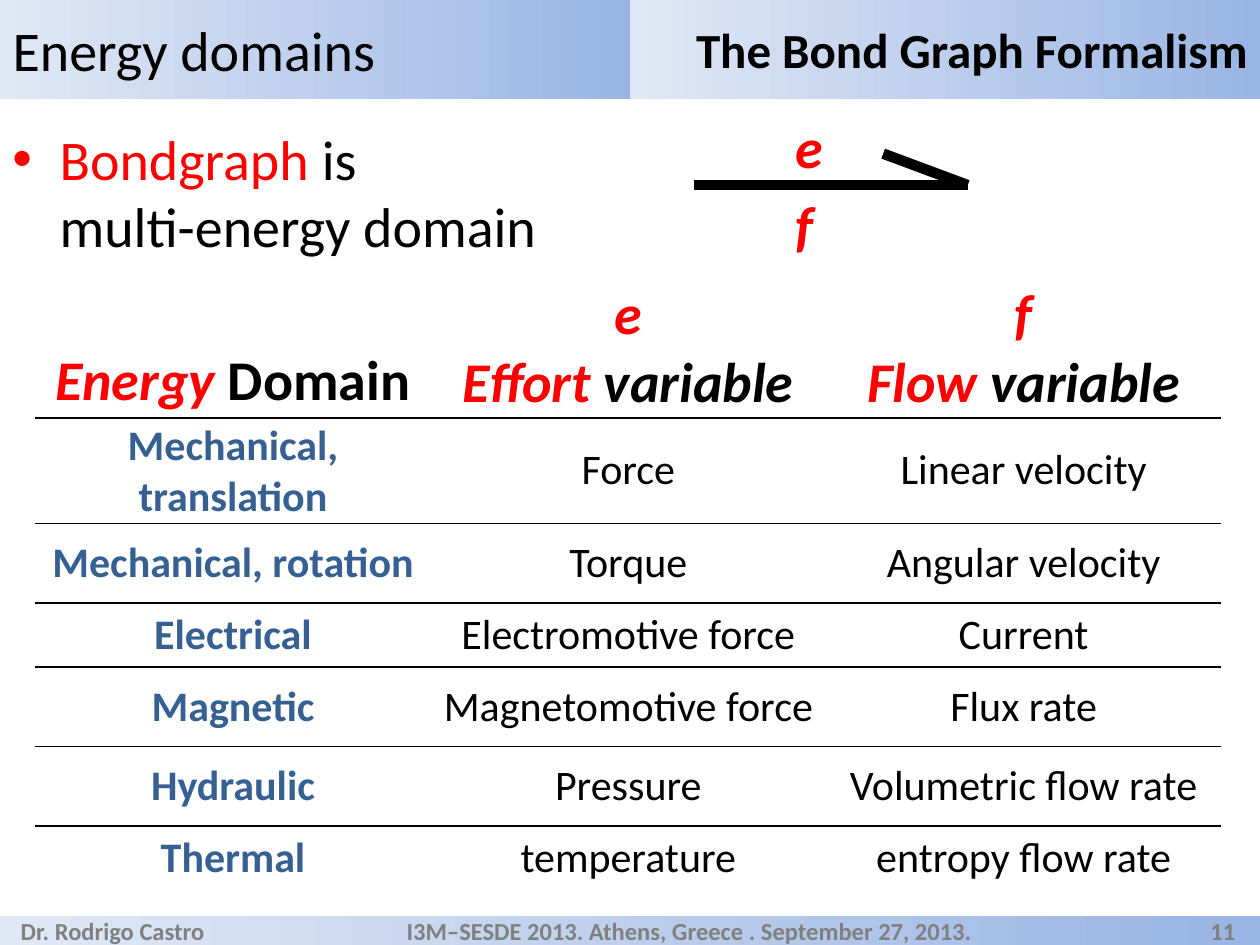
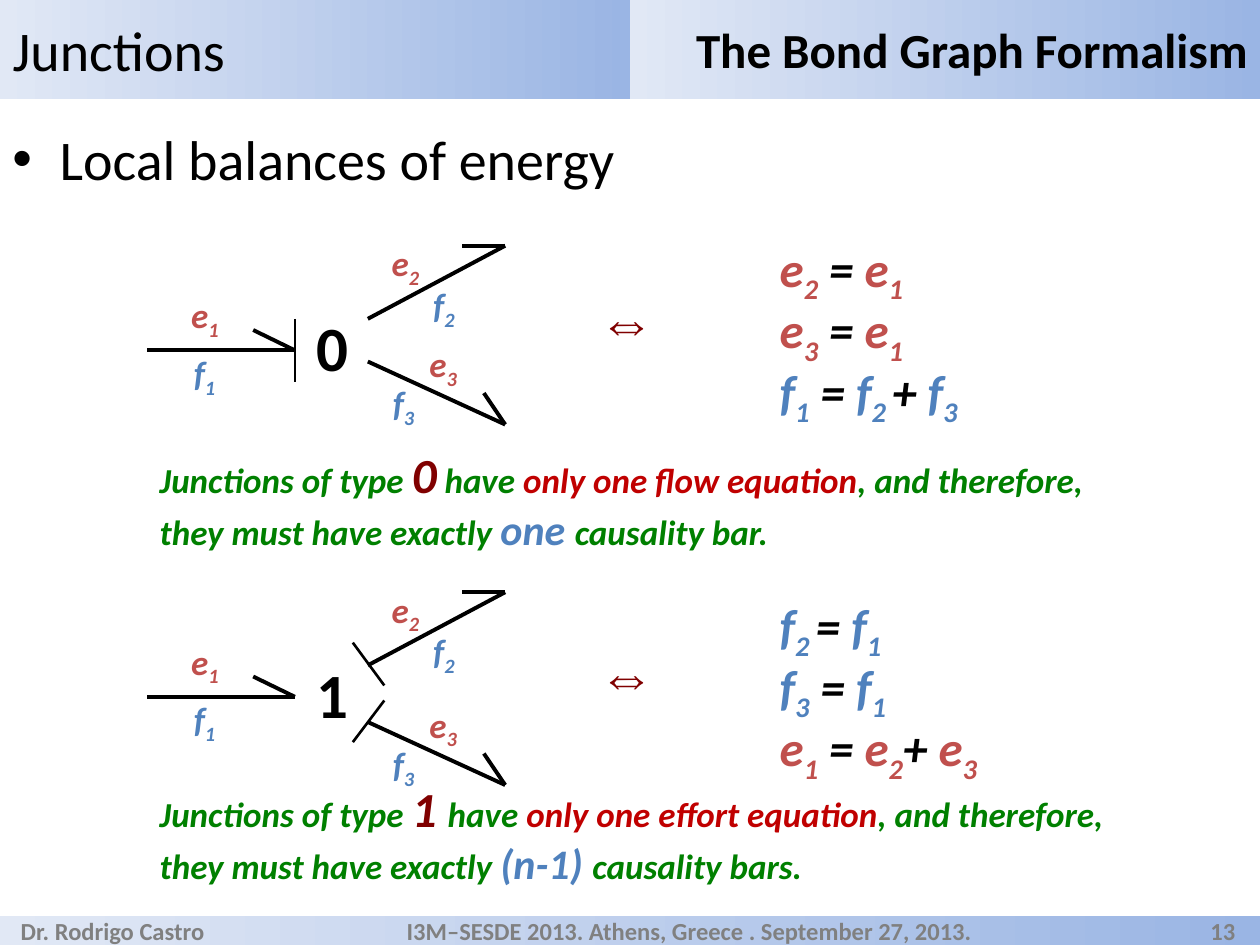
from lxml import etree
from pptx import Presentation
from pptx.dml.color import RGBColor
from pptx.enum.shapes import MSO_CONNECTOR, MSO_SHAPE
from pptx.enum.text import MSO_ANCHOR, MSO_AUTO_SIZE, PP_ALIGN
from pptx.oxml.ns import qn
from pptx.util import Pt

RECT = MSO_SHAPE.RECTANGLE
STRAIGHT = MSO_CONNECTOR.STRAIGHT
TOP, MIDDLE, BOTTOM = MSO_ANCHOR.TOP, MSO_ANCHOR.MIDDLE, MSO_ANCHOR.BOTTOM
LEFT, CENTER, RIGHT = PP_ALIGN.LEFT, PP_ALIGN.CENTER, PP_ALIGN.RIGHT
FIXED = MSO_AUTO_SIZE.NONE

BLACK = RGBColor(0x00, 0x00, 0x00)
RED = RGBColor(0xFF, 0x00, 0x00)
GRAY = RGBColor(0x80, 0x80, 0x80)
NAVY = RGBColor(0x37, 0x60, 0x92)
ROSE = RGBColor(0xC0, 0x50, 0x4D)
BLUE = RGBColor(0x4F, 0x81, 0xBD)
GREEN = RGBColor(0x00, 0x80, 0x00)
MAROON = RGBColor(0x80, 0x00, 0x00)
CRIMSON = RGBColor(0xC0, 0x00, 0x00)
DEEP = RGBColor(0x9A, 0xB5, 0xE4)
PALE = RGBColor(0xE1, 0xE8, 0xF5)
HUES = {"e": ROSE, "f": BLUE}


def write(frame, rows, align=LEFT, anchor=TOP, font="Calibri"):
    """Each run is (text, size, colour, style); style letters: b, i, s for subscript."""
    frame.word_wrap = True
    frame.vertical_anchor = anchor
    for n, runs in enumerate(rows):
        para = frame.add_paragraph() if n else frame.paragraphs[0]
        para.alignment = align
        for text, size, color, style in runs:
            if text == "\n":
                para.add_line_break()
                continue
            run = para.add_run()
            run.text = text
            run.font.name = font
            run.font.size = Pt(size)
            run.font.color.rgb = color
            run.font.bold = "b" in style
            run.font.italic = "i" in style
            if "s" in style:
                run._r.get_or_add_rPr().set("baseline", "-25000")


def draw(slide, ends, width):
    line = slide.shapes.add_connector(STRAIGHT, *map(Pt, ends))
    line.line.color.rgb = BLACK
    line.line.width = Pt(width)
    etree.SubElement(line._element.spPr, qn("a:effectLst"))


deck = Presentation()
deck.slide_width, deck.slide_height = Pt(720), Pt(540)

pages = [
    ("Energy domains", "11",
     [("Bondgraph ", 32, RED, ""), ("is ", 32, BLACK, ""),
      ("\n", 32, BLACK, ""), ("multi-energy domain", 32, BLACK, "")]),
    ("Junctions", "13", [("Local balances of energy", 32, BLACK, "")]),
]
bands = [(360, 0, 360, 56.7), (0, 0, 360, 56.7), (0, 523.5, 720, 16.5)]
slides = []

for name, number, point in pages:
    slide = deck.slides.add_slide(deck.slide_layouts[5])
    slides.append(slide)
    for box in bands:
        band = slide.shapes.add_shape(RECT, *map(Pt, box))
        band.shadow.inherit = False
        band.line.fill.background()
        band.fill.gradient()
        band.fill.gradient_angle = 180
        for stop, color in zip(band.fill.gradient_stops, (DEEP, PALE)):
            stop.color.rgb = color

    title = slide.shapes.title
    slide.shapes._spTree.append(title._element)
    title.left, title.top, title.width, title.height = map(Pt, (0, 0, 360, 56.2))
    title.text_frame.auto_size = FIXED
    write(title.text_frame, [[(name, 32, BLACK, "")]], LEFT, MIDDLE)

    labels = [
        ((360, 0, 360, 56.2), "The Bond Graph Formalism", 28, BLACK, RIGHT),
        ((4.8, 523.5, 150, 16.5), "Dr. Rodrigo Castro", 14, GRAY, LEFT),
        ((214, 523.5, 360, 16.5), "I3M–SESDE 2013. Athens, Greece . September 27, 2013.",
         14, GRAY, CENTER),
        ((653, 523.5, 60, 16.5), number, 14, GRAY, RIGHT),
    ]
    for box, text, size, color, align in labels:
        label = slide.shapes.add_textbox(*map(Pt, box))
        write(label.text_frame, [[(text, size, color, "b")]], align, MIDDLE)

    body = slide.shapes.add_textbox(*map(Pt, (0, 67.7, 720, 455.8)))
    write(body.text_frame, [point])
    props = body.text_frame.paragraphs[0]._p.get_or_add_pPr()
    props.set("marL", str(Pt(27)))
    props.set("indent", str(Pt(-27)))
    etree.SubElement(props, qn("a:buFont")).set("typeface", "Arial")
    etree.SubElement(props, qn("a:buChar")).set("char", "•")

domains, balance = slides

heads = [
    [[("Energy ", 32, RED, "bi"), ("Domain", 32, BLACK, "b")]],
    [[("e", 32, RED, "bi")],
     [("Effort", 32, RED, "bi"), (" variable", 32, BLACK, "bi")]],
    [[("f", 32, RED, "bi")],
     [("Flow", 32, RED, "bi"), (" variable", 32, BLACK, "bi")]],
]
facts = [
    ("Mechanical, translation", "Force", "Linear velocity"),
    ("Mechanical, rotation", "Torque", "Angular velocity"),
    ("Electrical", "Electromotive force", "Current"),
    ("Magnetic", "Magnetomotive force", "Flux rate"),
    ("Hydraulic", "Pressure", "Volumetric flow rate"),
    ("Thermal", "temperature", "entropy flow rate"),
]
grid = [heads] + [
    [[[(text, 24, BLACK if col else NAVY, "" if col else "b")]]
     for col, text in enumerate(fact)]
    for fact in facts
]
heights = [67, 53.3, 45.4, 36.7, 45.4, 45.4, 36.7]
last = len(grid) - 1

table = domains.shapes.add_table(
    len(grid), 3, Pt(20.2), Pt(159.1), Pt(677.7), Pt(sum(heights))).table
table.first_row = table.horz_banding = False
for col in table.columns:
    col.width = Pt(225.9)
for n, cells in enumerate(grid):
    table.rows[n].height = Pt(heights[n])
    for col, rows in enumerate(cells):
        cell = table.cell(n, col)
        cell.margin_left = cell.margin_right = Pt(2.9)
        cell.margin_top = cell.margin_bottom = Pt(1.4)
        write(cell.text_frame, rows, CENTER)
        cell.vertical_anchor = MIDDLE if n else BOTTOM
        props = cell._tc.get_or_add_tcPr()
        ruled = {"T": n > 0, "B": n < last}
        for side in "LRTB":
            edge = etree.SubElement(props, qn("a:ln" + side), w=str(Pt(1)))
            if ruled.get(side):
                fill = etree.SubElement(edge, qn("a:solidFill"))
                etree.SubElement(fill, qn("a:srgbClr"), val=str(BLACK))
            else:
                etree.SubElement(edge, qn("a:noFill"))
        cell.fill.background()

for ends in [(396.7, 105.8, 553, 105.8), (553, 105.8, 504.7, 87.8)]:
    draw(domains, ends, 6)
for sign, top in [("e", 60.5), ("f", 105.1)]:
    label = domains.shapes.add_textbox(Pt(447.8), Pt(top), Pt(36), Pt(46))
    write(label.text_frame, [[(sign, 32, RED, "bi")]])

joints = [
    ("0", 0, 0, [(168.5, 182.2, 168.5, 218.2)],
     145.4, ["e|2| = |e|1", "e|3| = |e|1", "f|1| = |f|2 |+ |f|3"],
     160.6, 250.6,
     [("0", 28, MAROON), (" have ", 20, GREEN), ("only one flow equation", 20, CRIMSON)],
     "one ", "causality bar."),
    ("1", 198, 206, [(201.6, 367.2, 219.6, 391.7), (201.6, 424.1, 219.6, 400.3)],
     349.2, ["f|2 |= |f|1", "f|3| = |f|1", "e|1| = |e|2|+ |e|3"],
     362.9, 441.4,
     [("1 ", 28, MAROON), ("have ", 20, GREEN), ("only one effort equation", 20, CRIMSON)],
     "(n-1) ", "causality bars."),
]
for kind, high, low, bars, mathtop, sums, signtop, notetop, claim, count, close in joints:
    bonds = [
        (84.2, 200.2, 168.5, 200.2, high), (168.5, 200.2, 144.7, 188.6, high),
        (210.2, 182.2, 288.7, 140.4, high), (288.7, 140.4, 264.2, 140.4, high),
        (210.2, 206.6, 288.7, 242.6, low), (288.7, 242.6, 276.5, 224.6, low),
    ]
    for x1, y1, x2, y2, drop in bonds:
        draw(balance, (x1, y1 + drop, x2, y2 + drop), 2.25)
    for bar in bars:
        draw(balance, bar, 1.5)

    tags = [
        ("e", "1", 102.2, 164.2 + high), ("e", "2", 216.7, 134.6 + high),
        ("e", "3", 238.3, 192.2 + low), ("f", "1", 103.7, 197.3 + high),
        ("f", "2", 240.5, 158.4 + high), ("f", "3", 217.4, 214.6 + low),
    ]
    for sign, index, left, top in tags:
        tag = balance.shapes.add_textbox(Pt(left), Pt(top), Pt(42), Pt(31))
        write(tag.text_frame, [[(sign, 20, HUES[sign], "bi"), (index, 20, HUES[sign], "bis")]])

    node = balance.shapes.add_textbox(Pt(174), Pt(172.8 + high), Pt(30), Pt(51))
    write(node.text_frame, [[(kind, 36, BLACK, "b")]])
    sign = balance.shapes.add_textbox(Pt(335), Pt(signtop), Pt(60), Pt(45))
    write(sign.text_frame, [[("⇔", 32, MAROON, "b")]], font="Arial")

    rows = []
    for term in sums:
        runs = []
        for part in term.split("|"):
            if part in HUES:
                color = HUES[part]
            index = part.strip().isdigit()
            shade = color if index or part in HUES else BLACK
            runs.append((part, 28, shade, "bis" if index else "bi"))
        rows.append(runs)
    block = balance.shapes.add_textbox(Pt(438.5), Pt(mathtop), Pt(160), Pt(92))
    write(block.text_frame, rows)
    for para in block.text_frame.paragraphs:
        para.line_spacing = 0.5
        para.space_before = Pt(16)

    runs = [("Junctions of type ", 20, GREEN), *claim,
            (", and therefore, they must have exactly ", 20, GREEN),
            (count, 24, BLUE), (close, 20, GREEN)]
    note = balance.shapes.add_textbox(Pt(84.2), Pt(notetop), Pt(576), Pt(70.6))
    write(note.text_frame, [[(*run, "bi") for run in runs]])

deck.save("out.pptx")
